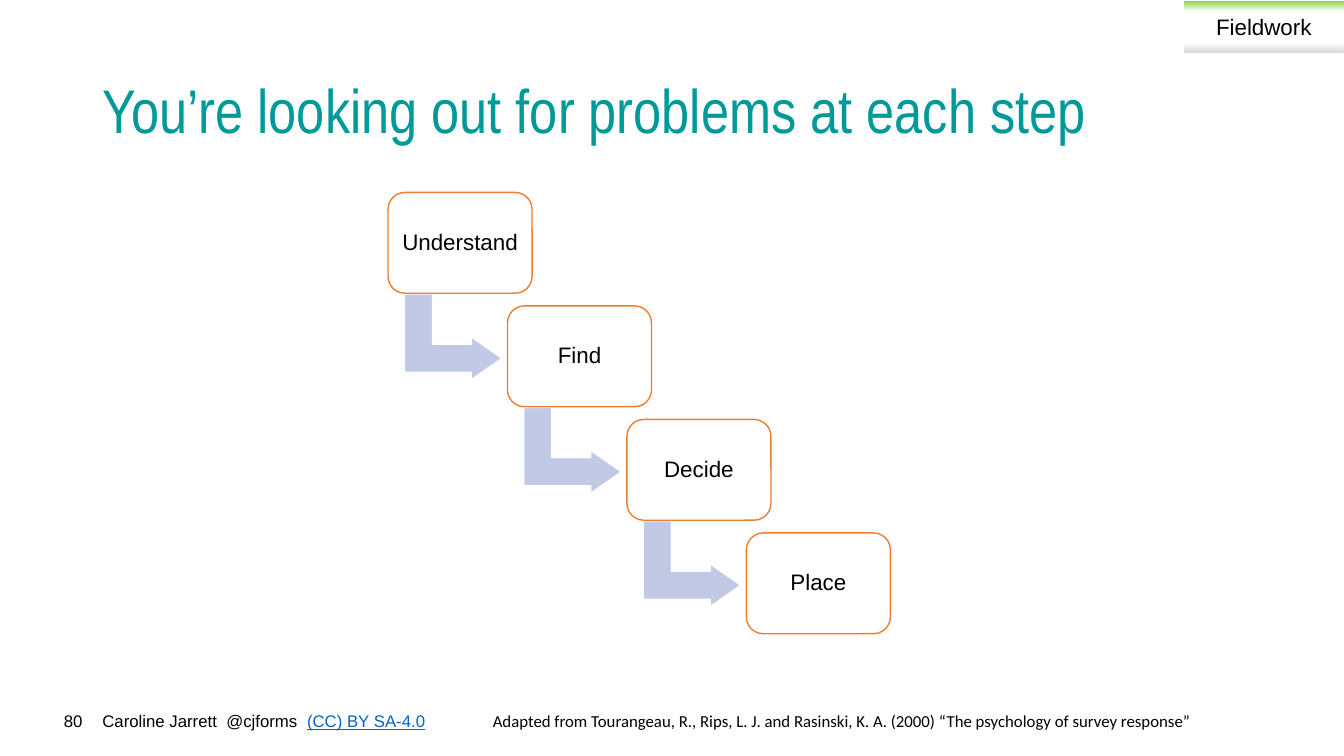
from lxml.etree import SubElement
from pptx import Presentation
from pptx.dml.color import RGBColor
from pptx.enum.shapes import MSO_SHAPE as Preset
from pptx.enum.text import MSO_ANCHOR as Anchor, PP_ALIGN as Align
from pptx.oxml.ns import qn
from pptx.util import Cm, Pt

BLACK = RGBColor(0x00, 0x00, 0x00)
WHITE = RGBColor(0xFF, 0xFF, 0xFF)
TEAL = RGBColor(0x00, 0x99, 0x99)
LINK_BLUE = RGBColor(0x05, 0x63, 0xC1)
ORANGE = RGBColor(0xED, 0x7D, 0x31)
LILAC = RGBColor(0xC1, 0xC9, 0xE4)
GREEN = RGBColor(0x92, 0xD0, 0x50)
GREY = RGBColor(0xD9, 0xD9, 0xD9)

TITLE = "You’re looking out for problems at each step"
STEPS = ["Understand", "Find", "Decide", "Place"]
TAG = "Fieldwork"
TAG_STOPS = [(0, GREEN), (20, WHITE), (80, WHITE), (100, GREY)]
PAGE_NUMBER = "80"
AUTHOR = "Caroline Jarrett  @cjforms  "
LICENCE = "(CC) BY SA-4.0"
CITATION = ("Adapted from Tourangeau, R., Rips, L. J. and Rasinski, K. A. (2000) "
            "“The psychology of survey response”")

# Lengths in centimetres
STEP_LEFT, STEP_TOP = 9.78, 4.85
STEP_WIDTH, STEP_HEIGHT = 3.63, 2.54
PITCH_X, PITCH_Y = 3.01, 2.86
ARROW_DX, ARROW_DY = 0.56, 2.41
ARROW_WIDTH, ARROW_HEIGHT = 2.16, 2.46
FOOTER_TOP, FOOTER_HEIGHT = 17.78, 0.76


def add_span(para, text, size=12, font="Arial", color=BLACK, underline=None):
    span = para.add_run()
    span.text = text
    span.font.size = Pt(size)
    span.font.name = font
    span.font.color.rgb = color
    span.font.underline = underline


def write(shape, text, align=Align.LEFT, anchor=Anchor.TOP, spacing=None, wrap=True, **font):
    frame = shape.text_frame
    frame.word_wrap = wrap
    frame.vertical_anchor = anchor
    para = frame.paragraphs[0]
    para.alignment = align
    para.line_spacing = spacing
    add_span(para, text, **font)
    return para


def add_text(page, text, left, top, width, height, **style):
    box = page.shapes.add_textbox(Cm(left), Cm(top), Cm(width), Cm(height))
    return write(box, text, **style)


def add_preset(page, preset, left, top, width, height, fill=None, line=None, adjust=()):
    shape = page.shapes.add_shape(preset, Cm(left), Cm(top), Cm(width), Cm(height))
    shape.shadow.inherit = False
    if fill is not None:
        shape.fill.solid()
        shape.fill.fore_color.rgb = fill
    if line is None:
        shape.line.fill.background()
    else:
        shape.line.color.rgb = line
        shape.line.width = Pt(1)
    for index, value in enumerate(adjust):
        shape.adjustments[index] = value
    return shape


def shade_downwards(shape, stops):
    shape.fill.gradient()
    shape.fill.gradient_angle = 270
    stop_list = shape.element.spPr.find(".//" + qn("a:gsLst"))
    for old in list(stop_list):
        stop_list.remove(old)
    for percent, color in stops:
        stop = SubElement(stop_list, qn("a:gs"), pos=str(percent * 1000))
        SubElement(stop, qn("a:srgbClr"), val=str(color))


def add_step(page, index, name):
    left, top = STEP_LEFT + index * PITCH_X, STEP_TOP + index * PITCH_Y
    if index < len(STEPS) - 1:
        arrow = add_preset(page, Preset.BENT_UP_ARROW, left + ARROW_DX, top + ARROW_DY,
                           ARROW_WIDTH, ARROW_HEIGHT, LILAC, WHITE, (0.328, 0.25, 0.358))
        arrow.rotation = 90
    step = add_preset(page, Preset.ROUNDED_RECTANGLE, left, top,
                      STEP_WIDTH, STEP_HEIGHT, WHITE, ORANGE, (0.167,))
    write(step, name, align=Align.CENTER, anchor=Anchor.MIDDLE, spacing=0.9, wrap=False, size=16)


def main():
    deck = Presentation()
    deck.slide_width, deck.slide_height = Cm(33.87), Cm(19.05)
    page = deck.slides.add_slide(deck.slide_layouts[6])

    add_text(page, TITLE, 2.33, 1.02, 29.21, 3.68, anchor=Anchor.MIDDLE, spacing=0.9,
             size=44, font="Arial Narrow", color=TEAL)

    for index, name in enumerate(STEPS):
        add_step(page, index, name)

    tag = add_preset(page, Preset.RECTANGLE, 29.84, 0.03, 4.02, 1.3)
    shade_downwards(tag, TAG_STOPS)
    write(tag, TAG, align=Align.CENTER, anchor=Anchor.MIDDLE, size=16)

    add_text(page, PAGE_NUMBER, 0, FOOTER_TOP, 2.33, FOOTER_HEIGHT, align=Align.RIGHT)
    credit = add_text(page, AUTHOR, 2.33, FOOTER_TOP, 14.5, FOOTER_HEIGHT)
    add_span(credit, LICENCE, color=LINK_BLUE, underline=True)
    add_text(page, CITATION, 12.17, FOOTER_TOP, 20.14, FOOTER_HEIGHT, font="Calibri")

    deck.save("out.pptx")


if __name__ == "__main__":
    main()
